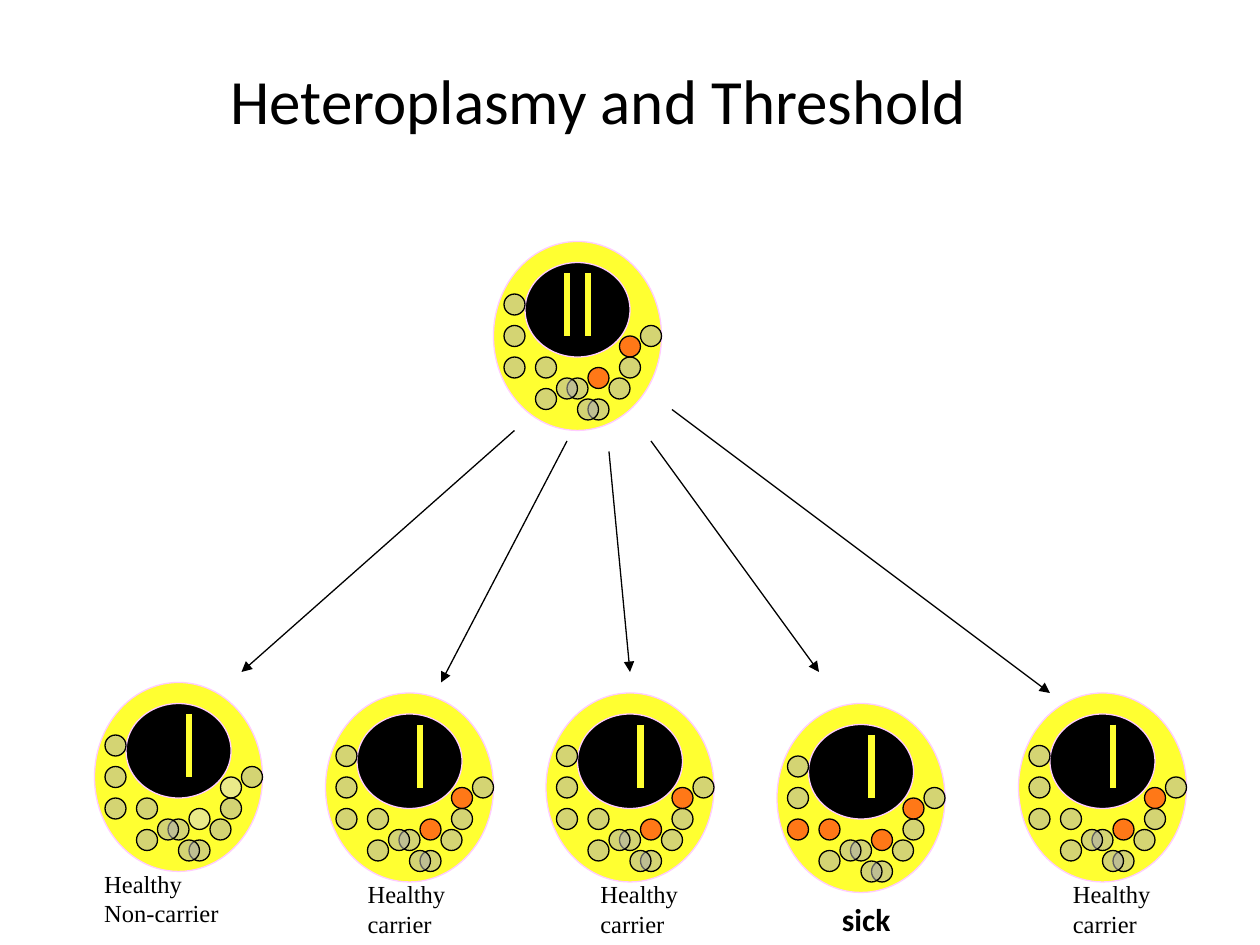
from dataclasses import dataclass

from lxml import etree
from pptx import Presentation
from pptx.dml.color import RGBColor
from pptx.enum.shapes import MSO_CONNECTOR, MSO_SHAPE
from pptx.enum.text import MSO_ANCHOR, MSO_AUTO_SIZE, PP_ALIGN
from pptx.oxml.ns import qn
from pptx.util import Pt

OVAL = MSO_SHAPE.OVAL
STRAIGHT = MSO_CONNECTOR.STRAIGHT
MIDDLE = MSO_ANCHOR.MIDDLE
TOP = MSO_ANCHOR.TOP
CENTER = PP_ALIGN.CENTER
LEFT = PP_ALIGN.LEFT
FIT_SHAPE = MSO_AUTO_SIZE.SHAPE_TO_FIT_TEXT
NO_FIT = MSO_AUTO_SIZE.NONE


@dataclass(frozen=True)
class Theme:
    """Colours, fonts and sizes of the slide."""

    cytoplasm: str = "FFFF31"
    membrane: str = "FFCCFF"
    ink: str = "000000"
    normal: str = "AEAEAE"
    pale: str = "D9D9D9"
    mutant: str = "FF0000"
    opacity: int = 53
    heading_font: str = "Calibri"
    label_font: str = "Times New Roman"
    title_size: float = 36
    label_size: float = 14
    sick_size: float = 18
    thin: float = 0.75
    thick: float = 3.5


THEME = Theme()
GRID = 6
MITOCHONDRIA = [(14, 8), (1, 8), (9, 12), (9, 15), (12, 11), (7, 13), (4, 11),
                (6, 13), (8, 15), (12, 9), (4, 14), (11, 13), (1, 11), (1, 5)]
CARRIER_SPOTS = {(9, 12), (12, 9)}
SICK_SPOTS = CARRIER_SPOTS | {(4, 11), (1, 11)}
CELLS = [
    (47, 23, (7, 9), CARRIER_SPOTS, THEME.mutant),
    (9, 65, (9,), CARRIER_SPOTS, THEME.pale),
    (31, 66, (9,), CARRIER_SPOTS, THEME.mutant),
    (52, 66, (9,), CARRIER_SPOTS, THEME.mutant),
    (74, 67, (9,), SICK_SPOTS, THEME.mutant),
    (97, 66, (9,), CARRIER_SPOTS, THEME.mutant),
]
ARROWS = [((49, 41), (23, 64)), ((54, 42), (42, 65)), ((58, 43), (60, 64)),
          ((62, 42), (78, 64)), ((64, 39), (100, 66))]
LABELS = [
    ("Healthy\nNon-carrier", 52.5, 493, 80),
    ("Healthy\ncarrier", 203, 499, 59),
    ("Healthy\ncarrier", 336, 499, 59),
    ("Healthy\ncarrier", 606, 499, 59),
]


def add_oval(slide, left, top, width, height, fill, line, opacity=100):
    """Add an outlined ellipse, optionally see-through."""
    shape = slide.shapes.add_shape(OVAL, Pt(left), Pt(top), Pt(width), Pt(height))
    shape.shadow.inherit = False
    shape.fill.solid()
    shape.fill.fore_color.rgb = RGBColor.from_string(fill)
    shape.line.color.rgb = RGBColor.from_string(line)
    shape.line.width = Pt(THEME.thin)
    if opacity < 100:
        color = shape.fill._xPr.find(qn("a:solidFill"))[0]
        etree.SubElement(color, qn("a:alpha"), val=str(opacity * 1000))
    return shape


def add_line(slide, start, end, color, width, arrow=False):
    """Add a straight line between two grid points."""
    points = [Pt(GRID * value) for value in (*start, *end)]
    connector = slide.shapes.add_connector(STRAIGHT, *points)
    connector.line.color.rgb = RGBColor.from_string(color)
    connector.line.width = Pt(width)
    if arrow:
        etree.SubElement(connector.line._get_or_add_ln(), qn("a:tailEnd"), type="triangle")
    etree.SubElement(connector._element.spPr, qn("a:effectLst"))


def add_cell(slide, column, row, chromosomes, special_spots, special_color):
    """Add a cell with its nucleus, chromosomes and mitochondria."""
    left, top = GRID * column, GRID * row
    add_oval(slide, left, top, 96, 108, THEME.cytoplasm, THEME.membrane)
    nucleus = add_oval(slide, left + 21, top + 9, 54, 60, THEME.ink, THEME.membrane)
    nucleus.rotation = 90
    for offset in chromosomes:
        add_line(slide, (column + offset, row + 3), (column + offset, row + 9),
                 THEME.cytoplasm, THEME.thick)
    for spot in MITOCHONDRIA:
        color = special_color if spot in special_spots else THEME.normal
        add_oval(slide, left + GRID * spot[0], top + GRID * spot[1], 12, 12,
                 color, THEME.ink, THEME.opacity)


def add_text(slide, text, box, font, size, bold=False, title=False):
    """Add a text box as a centred title or a fitted label."""
    shape = slide.shapes.add_textbox(*[Pt(value) for value in box])
    frame = shape.text_frame
    frame.text = text
    frame.word_wrap = title
    frame.auto_size = NO_FIT if title else FIT_SHAPE
    frame.vertical_anchor = MIDDLE if title else TOP
    for paragraph in frame.paragraphs:
        paragraph.alignment = CENTER if title else LEFT
        for run in paragraph.runs:
            run.font.name = font
            run.font.size = Pt(size)
            run.font.bold = bold
            run.font.color.rgb = RGBColor.from_string(THEME.ink)


def main():
    """Build the heteroplasmy slide and save it."""
    presentation = Presentation()
    presentation.slide_width, presentation.slide_height = Pt(720), Pt(540)
    slide = presentation.slides.add_slide(presentation.slide_layouts[6])
    for cell in CELLS:
        add_cell(slide, *cell)
    for start, end in ARROWS:
        add_line(slide, start, end, THEME.ink, THEME.thin, arrow=True)
    add_text(slide, "Heteroplasmy and Threshold", (36, 12, 612, 90),
             THEME.heading_font, THEME.title_size, title=True)
    for text, left, top, width in LABELS:
        add_text(slide, text, (left, top, width, 41), THEME.label_font, THEME.label_size)
    add_text(slide, "sick", (474, 511, 49.5, 29), THEME.heading_font, THEME.sick_size, bold=True)
    presentation.save("out.pptx")


if __name__ == "__main__":
    main()
